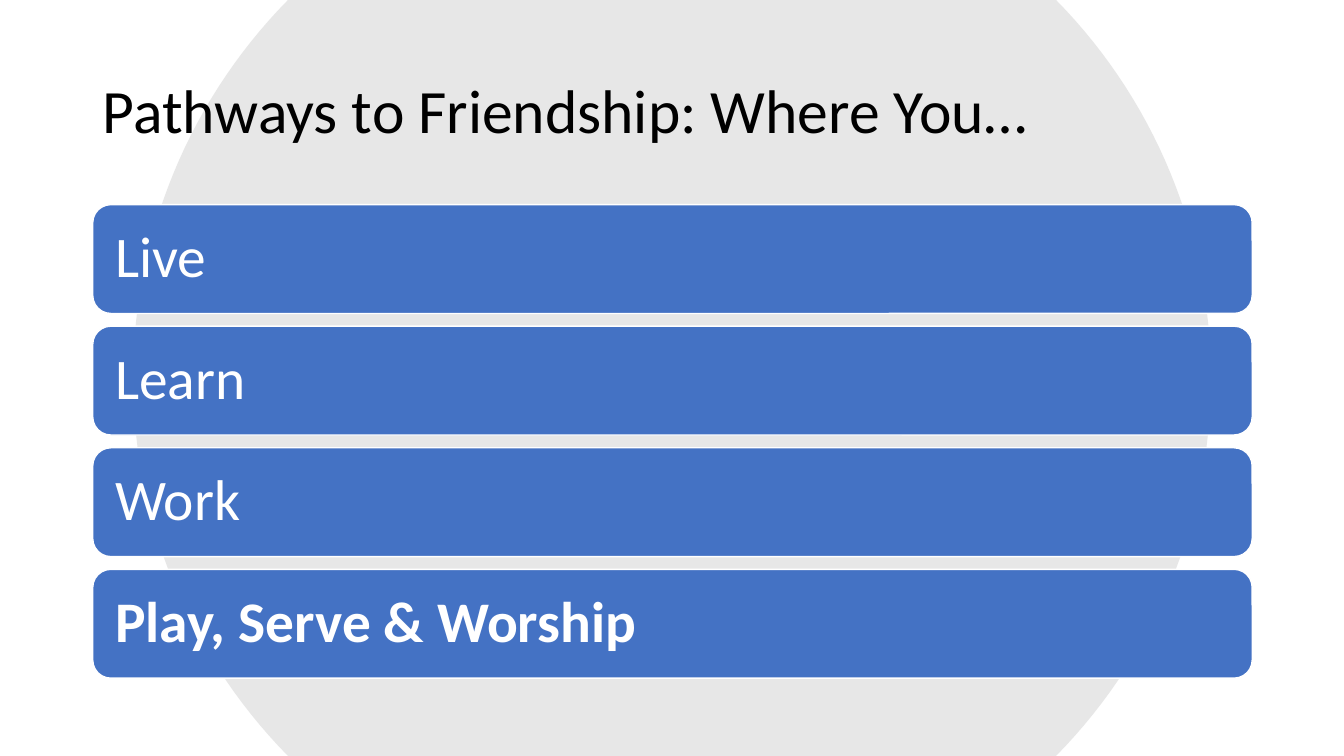
import math
import lxml.etree
import pptx
import pptx.dml.color
import pptx.enum.shapes
import pptx.enum.text
import pptx.oxml.ns
import pptx.util
from dataclasses import dataclass


@dataclass
class Theme:
    font: str = "Calibri"
    title_size: int = 44
    bar_size: int = 41
    black: str = "000000"
    white: str = "FFFFFF"
    blue: str = "4472C4"
    gray: str = "D9D9D9"
    gray_opacity: int = 62


theme = Theme()
color = pptx.dml.color.RGBColor.from_string
inches = pptx.util.Inches
WIDTH, HEIGHT = 13.33, 7.5
MARGIN, CONTENT_WIDTH = 0.92, 11.5


def write(box, text, size, hue, bold=False):
    """Put one left-aligned, vertically centred line into a shape."""
    frame = box.text_frame
    frame.word_wrap = True
    frame.auto_size = pptx.enum.text.MSO_AUTO_SIZE.NONE
    frame.vertical_anchor = pptx.enum.text.MSO_ANCHOR.MIDDLE
    para = frame.paragraphs[0]
    para.alignment = pptx.enum.text.PP_ALIGN.LEFT
    para.line_spacing = 0.9
    span = para.add_run()
    span.text = text
    span.font.name = theme.font
    span.font.size = pptx.util.Pt(size)
    span.font.bold = bold
    span.font.color.rgb = color(hue)


deck = pptx.Presentation()
deck.slide_width, deck.slide_height = inches(WIDTH), inches(HEIGHT)
page = deck.slides.add_slide(deck.slide_layouts.get_by_name("Title Only"))
page.background.fill.solid()
page.background.fill.fore_color.rgb = color(theme.white)

# Background circle, cut off at the top and bottom of the slide
RADIUS, STEPS = 5.345, 60
reach = math.asin(HEIGHT / 2 / RADIUS)
points = []
for side in (0, math.pi):
    for step in range(STEPS + 1):
        angle = side - reach + 2 * reach * step / STEPS
        points.append((inches(WIDTH / 2 + RADIUS * math.cos(angle)),
                       inches(HEIGHT / 2 + RADIUS * math.sin(angle))))
builder = page.shapes.build_freeform(*points[0])
builder.add_line_segments(points[1:], close=True)
circle = builder.convert_to_shape()
circle.shadow.inherit = False
circle.line.fill.background()
circle.fill.solid()
circle.fill.fore_color.rgb = color(theme.gray)
gray_node = circle._element.spPr.find(".//" + pptx.oxml.ns.qn("a:srgbClr"))
opacity = lxml.etree.SubElement(gray_node, pptx.oxml.ns.qn("a:alpha"))
opacity.set("val", str(theme.gray_opacity * 1000))

# Title, moved in front of the circle
title = page.shapes.title
title.left, title.top = inches(MARGIN), inches(0.4)
title.width, title.height = inches(CONTENT_WIDTH), inches(1.45)
write(title, "Pathways to Friendship: Where You…", theme.title_size, theme.black)
circle._element.addnext(title._element)

# Four stacked bars, the last one emphasised
BAR_TOP, BAR_HEIGHT, BAR_PITCH, BAR_INSET = 2.03, 1.08, 1.206, 0.17
places = ["Live", "Learn", "Work", "Play, Serve & Worship"]
for row, place in enumerate(places):
    bar = page.shapes.add_shape(
        pptx.enum.shapes.MSO_SHAPE.ROUNDED_RECTANGLE,
        inches(MARGIN), inches(BAR_TOP + row * BAR_PITCH),
        inches(CONTENT_WIDTH), inches(BAR_HEIGHT))
    bar.shadow.inherit = False
    bar.fill.solid()
    bar.fill.fore_color.rgb = color(theme.blue)
    bar.line.color.rgb = color(theme.white)
    bar.line.width = pptx.util.Pt(1)
    frame = bar.text_frame
    frame.margin_left = frame.margin_right = inches(BAR_INSET)
    frame.margin_top = frame.margin_bottom = inches(BAR_INSET)
    write(bar, place, theme.bar_size, theme.white, bold=place == places[-1])

deck.save("out.pptx")
